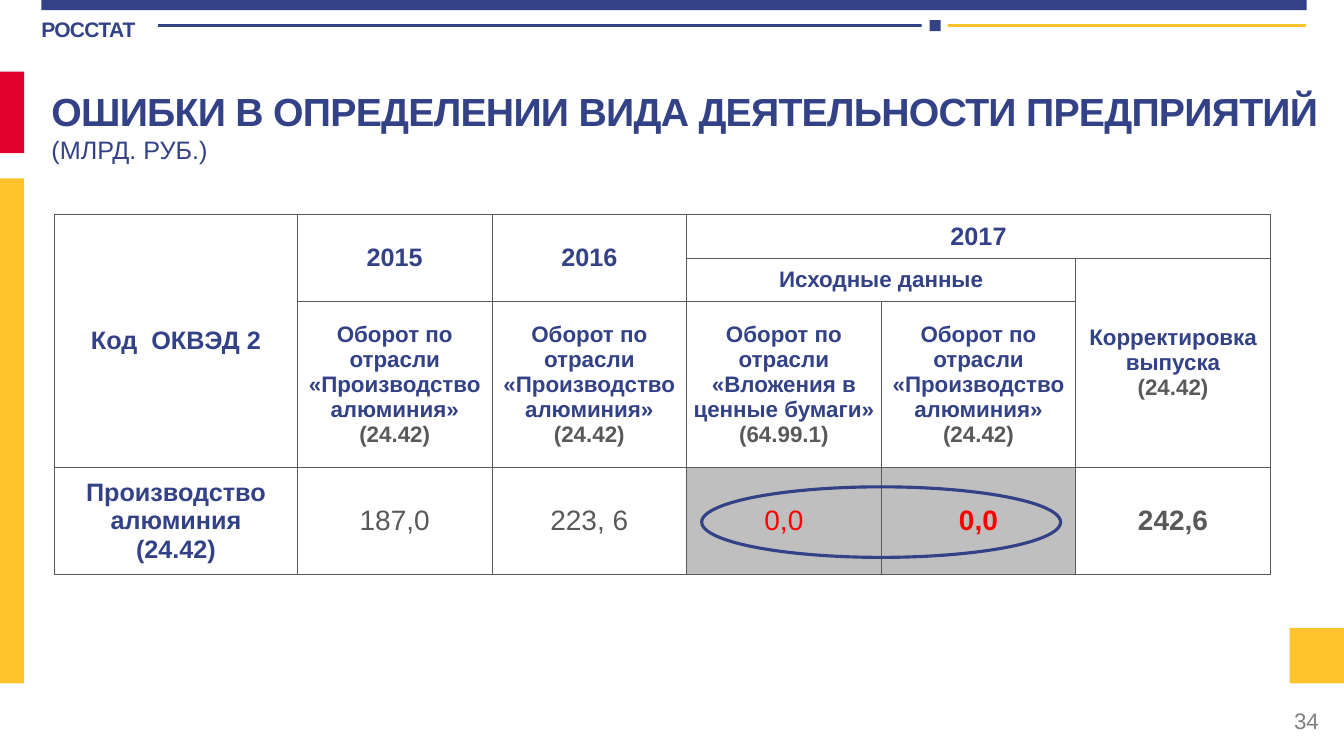
from lxml import etree
from pptx import Presentation
from pptx import util as u
from pptx.dml.color import RGBColor
from pptx.enum import shapes, text
from pptx.oxml import ns

PX = 9144
FONT = "Arial"
COLORS = {
    "navy": "334286", "red": "E1002B", "gold": "FFC32E", "gray": "595959",
    "page": "808080", "alert": "FF0000", "shade": "BFBFBF", "white": "FFFFFF",
}
COLS = [241] + [193] * 5
ROWS = [43, 43, 165, 106]
MERGES = [((0, 0), (2, 0)), ((0, 1), (1, 1)), ((0, 2), (1, 2)),
          ((0, 3), (0, 5)), ((1, 3), (1, 4)), ((1, 5), (2, 5))]
HEADS = {
    (0, 0): ("Код  ОКВЭД 2", 18), (0, 1): ("2015", 18), (0, 2): ("2016", 18),
    (0, 3): ("2017", 18), (1, 3): ("Исходные данные", 16),
}
METAL = "Оборот по отрасли «Производство алюминия»"
FUNDS = "Оборот по отрасли «Вложения в ценные бумаги»"
NOTES = {
    (1, 5): ("Корректировка выпуска", "(24.42)"),
    (2, 1): (METAL, "(24.42)"), (2, 2): (METAL, "(24.42)"),
    (2, 3): (FUNDS, "(64.99.1)"), (2, 4): (METAL, "(24.42)"),
}
VALUES = [("187,0", "gray", False), ("223, 6", "gray", False),
          ("0,0", "alert", False), ("0,0", "alert", True),
          ("242,6", "gray", True)]


def px(*sizes):
    return [u.Emu(size * PX) for size in sizes]


def rgb(name):
    return RGBColor.from_string(COLORS[name])


def add_run(para, words, size, color, bold=False, track=0):
    run = para.add_run()
    run.text = words
    font = run.font
    font.name, font.size, font.bold = FONT, u.Pt(size), bold
    font.color.rgb = rgb(color)
    if track:
        run._r.get_or_add_rPr().set("spc", str(track))


def set_frame(frame, anchor, inset=(10, 5, 10, 5)):
    frame.word_wrap = True
    frame.auto_size = text.MSO_AUTO_SIZE.NONE
    frame.vertical_anchor = anchor
    (frame.margin_left, frame.margin_top,
     frame.margin_right, frame.margin_bottom) = px(*inset)


def add_label(slide, box, words, size, color, align, anchor, **style):
    frame = slide.shapes.add_textbox(*px(*box)).text_frame
    set_frame(frame, anchor, style.pop("inset", (10, 5, 10, 5)))
    para = frame.paragraphs[0]
    para.alignment = align
    add_run(para, words, size, color, **style)


def add_block(slide, box, color):
    block = slide.shapes.add_shape(shapes.MSO_SHAPE.RECTANGLE, *px(*box))
    block.shadow.inherit = False
    block.fill.solid()
    block.fill.fore_color.rgb = rgb(color)
    block.line.fill.background()


def add_rule(slide, left, right, top, color):
    rule = slide.shapes.add_connector(
        shapes.MSO_CONNECTOR.STRAIGHT, *px(left, top, right, top))
    rule.line.color.rgb = rgb(color)
    rule.line.width = u.Pt(2)
    etree.SubElement(rule._element.spPr, ns.qn("a:effectLst"))


def add_ring(slide, box):
    ring = slide.shapes.add_shape(shapes.MSO_SHAPE.OVAL, *px(*box))
    ring.shadow.inherit = False
    ring.fill.background()
    ring.line.color.rgb = rgb("navy")
    ring.line.width = u.Pt(2.25)


def add_title(slide):
    title = slide.shapes.title
    title.left, title.top, title.width, title.height = px(41, 82, 1341, 80)
    set_frame(title.text_frame, text.MSO_ANCHOR.TOP)
    para = title.text_frame.paragraphs[0]
    para.alignment = text.PP_ALIGN.LEFT
    add_run(para, "ОШИБКИ В ОПРЕДЕЛЕНИИ ВИДА ДЕЯТЕЛЬНОСТИ ПРЕДПРИЯТИЙ ",
            28, "navy", bold=True, track=-50)
    add_run(para, "(МЛРД. РУБ.)", 18, "navy")


def set_cell(cell, shaded):
    """Give a cell its fill, thin borders and centred text."""
    if shaded:
        cell.fill.solid()
        cell.fill.fore_color.rgb = rgb("shade")
    else:
        cell.fill.background()
    cell.vertical_anchor = text.MSO_ANCHOR.MIDDLE
    cell.margin_left = cell.margin_right = 0
    cell.margin_top = cell.margin_bottom = 0
    cell.text_frame.paragraphs[0].alignment = text.PP_ALIGN.CENTER
    props = cell._tc.get_or_add_tcPr()
    for spot, side in enumerate("LRTB"):
        edge = etree.Element(ns.qn("a:ln" + side), w=str(u.Pt(0.5)))
        fill = etree.SubElement(edge, ns.qn("a:solidFill"))
        etree.SubElement(fill, ns.qn("a:srgbClr"), val=COLORS["gray"])
        props.insert(spot, edge)


def add_grid(slide):
    frame = slide.shapes.add_table(
        len(ROWS), len(COLS), *px(54, 213, sum(COLS), sum(ROWS)))
    grid = frame.table
    grid.first_row = grid.horz_banding = False
    for col, width in zip(grid.columns, px(*COLS)):
        col.width = width
    for row, height in zip(grid.rows, px(*ROWS)):
        row.height = height
    for r in range(len(ROWS)):
        for c in range(len(COLS)):
            set_cell(grid.cell(r, c), r == 3 and c in (3, 4))
    for start, end in MERGES:
        grid.cell(*start).merge(grid.cell(*end))

    def first(r, c):
        return grid.cell(r, c).text_frame.paragraphs[0]

    for spot, (words, size) in HEADS.items():
        add_run(first(*spot), words, size, "navy", bold=True)
    for spot, (words, code) in NOTES.items():
        para = first(*spot)
        add_run(para, words, 16, "navy", bold=True)
        para.add_line_break()
        add_run(para, code, 16, "gray", bold=True)
    add_run(first(3, 0), "Производство алюминия", 18, "navy", bold=True)
    para = grid.cell(3, 0).text_frame.add_paragraph()
    para.alignment = text.PP_ALIGN.CENTER
    add_run(para, "(24.42)", 18, "navy", bold=True)
    for c, (words, color, bold) in enumerate(VALUES, 1):
        add_run(first(3, c), words, 20, color, bold=bold)


def main():
    deck = Presentation()
    deck.slide_width, deck.slide_height = u.Inches(13.33), u.Inches(7.5)
    slide = deck.slides.add_slide(deck.slide_layouts[5])
    add_label(slide, (40, 13, 115, 32), "РОССТАТ", 15, "navy",
              text.PP_ALIGN.LEFT, text.MSO_ANCHOR.TOP,
              bold=True, track=-50, inset=(1, 3, 0, 0))
    add_block(slide, (41, 0, 1255, 10), "navy")
    add_block(slide, (0, 71, 24, 81), "red")
    add_block(slide, (0, 177, 24, 501), "gold")
    add_label(slide, (1018, 695, 300, 40), "34", 16, "page",
              text.PP_ALIGN.RIGHT, text.MSO_ANCHOR.MIDDLE)
    add_title(slide)
    add_block(slide, (1279, 623, 54, 55), "gold")
    add_rule(slide, 157, 933, 25, "navy")
    add_rule(slide, 919, 1295, 25, "gold")
    add_block(slide, (914, 20, 26, 11), "white")
    add_block(slide, (922, 20, 11, 11), "navy")
    add_grid(slide)
    add_ring(slide, (696, 483, 356, 70))
    deck.save("out.pptx")


if __name__ == "__main__":
    main()
